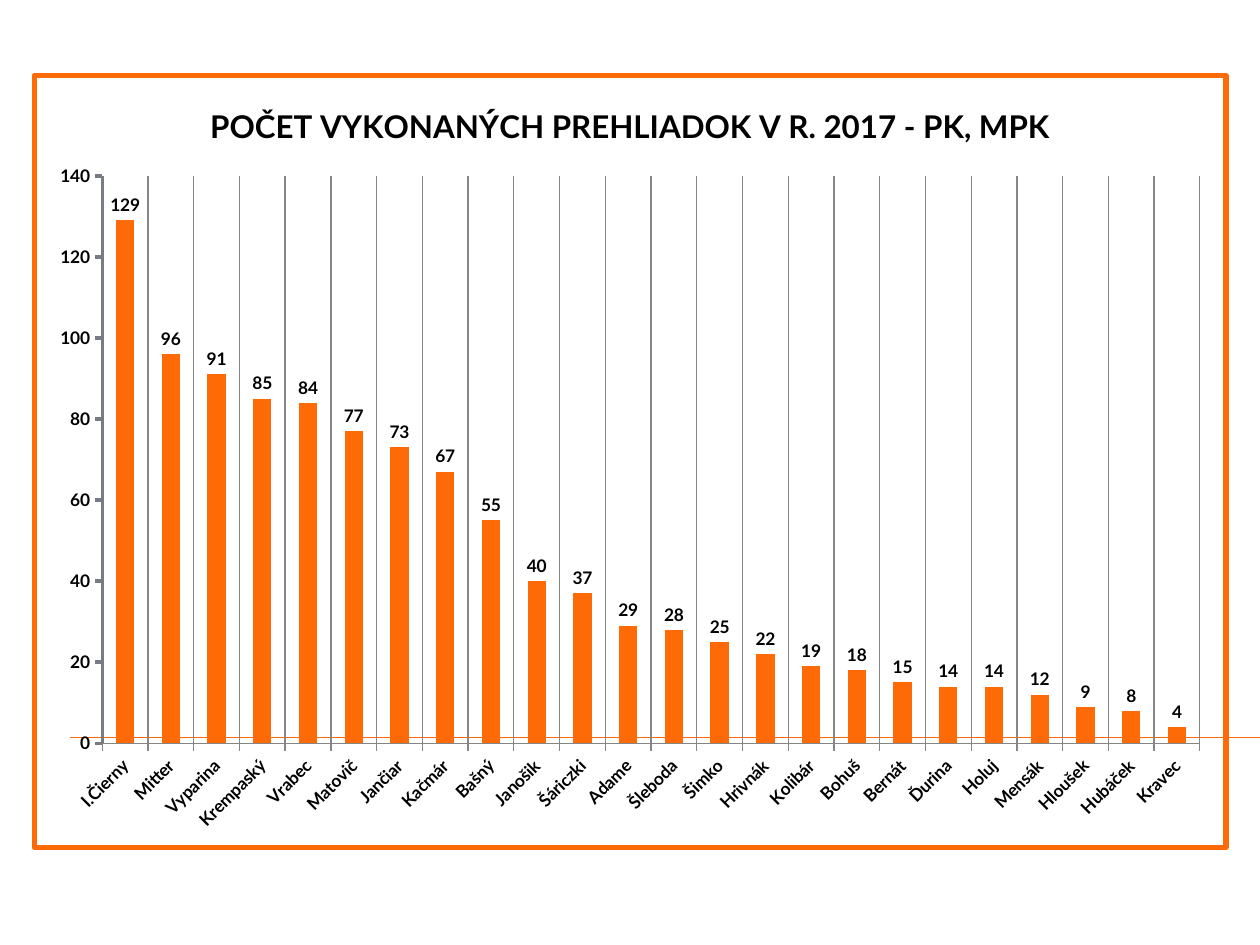
from dataclasses import dataclass

from lxml import etree
from pptx import Presentation
from pptx.chart.axis import CategoryAxis, ValueAxis
from pptx.chart.chart import Chart
from pptx.chart.data import CategoryChartData
from pptx.dml.color import RGBColor
from pptx.dml.line import LineFormat
from pptx.enum.chart import XL_CHART_TYPE, XL_LABEL_POSITION, XL_TICK_MARK
from pptx.enum.shapes import MSO_CONNECTOR
from pptx.oxml import parse_xml
from pptx.oxml.ns import nsdecls, qn
from pptx.slide import Slide
from pptx.text.text import Font
from pptx.util import Cm, Pt

COLUMNS = XL_CHART_TYPE.COLUMN_CLUSTERED
OUTSIDE_END = XL_LABEL_POSITION.OUTSIDE_END
TICK_OUT = XL_TICK_MARK.OUTSIDE
TICK_NONE = XL_TICK_MARK.NONE
STRAIGHT = MSO_CONNECTOR.STRAIGHT

ORANGE = "FE6A06"
GREY = "777C84"
GRID_GREY = "868686"
BLACK = "000000"
TYPEFACE = "Lato"
TITLE = "POČET VYKONANÝCH PREHLIADOK V R. 2017 - PK, MPK"


@dataclass(frozen=True)
class Inspector:
    surname: str
    inspections: int


INSPECTORS = [
    Inspector("I.Čierny", 129),
    Inspector("Mitter", 96),
    Inspector("Vyparina", 91),
    Inspector("Krempaský", 85),
    Inspector("Vrabec", 84),
    Inspector("Matovič", 77),
    Inspector("Jančiar", 73),
    Inspector("Kačmár", 67),
    Inspector("Bašný", 55),
    Inspector("Janošik", 40),
    Inspector("Šáriczki", 37),
    Inspector("Adame", 29),
    Inspector("Šleboda", 28),
    Inspector("Šimko", 25),
    Inspector("Hrivnák", 22),
    Inspector("Kolibár", 19),
    Inspector("Bohuš", 18),
    Inspector("Bernát", 15),
    Inspector("Ďurina", 14),
    Inspector("Holuj", 14),
    Inspector("Mensák", 12),
    Inspector("Hloušek", 9),
    Inspector("Hubáček", 8),
    Inspector("Kravec", 4),
]


def rgb(hex_colour: str) -> RGBColor:
    return RGBColor.from_string(hex_colour)


def style_font(font: Font, size: float, bold: bool = True) -> None:
    font.name = TYPEFACE
    font.size = Pt(size)
    font.bold = bold
    font.color.rgb = rgb(BLACK)


def style_line(line: LineFormat, colour: str, width: float) -> None:
    line.color.rgb = rgb(colour)
    line.width = Pt(width)


def draw_baseline(slide: Slide) -> None:
    baseline = slide.shapes.add_connector(
        STRAIGHT, Cm(1.42), Cm(14.86), Cm(25.4), Cm(14.86))
    style_line(baseline.line, ORANGE, 0.75)
    etree.SubElement(baseline.line._get_or_add_ln().getparent(), qn("a:effectLst"))


def frame_chart(chart: Chart, colour: str, width: float) -> None:
    border = parse_xml(
        f'<c:spPr {nsdecls("c", "a")}><a:noFill/><a:ln w="{Pt(width)}">'
        f'<a:solidFill><a:srgbClr val="{colour}"/></a:solidFill>'
        '<a:round/></a:ln></c:spPr>')
    chart.element.find(qn("c:chart")).addnext(border)


def place_plot(chart: Chart, x: float, y: float, w: float, h: float) -> None:
    plot_area = chart.element.find(f'{qn("c:chart")}/{qn("c:plotArea")}')
    for automatic in plot_area.findall(qn("c:layout")):
        plot_area.remove(automatic)
    edges = "".join(f'<c:{edge} val="{share}"/>'
                    for edge, share in zip("xywh", (x, y, w, h)))
    plot_area.insert(0, parse_xml(
        f'<c:layout {nsdecls("c")}><c:manualLayout><c:layoutTarget val="inner"/>'
        '<c:xMode val="edge"/><c:yMode val="edge"/>'
        f'{edges}</c:manualLayout></c:layout>'))


def style_axis(axis: CategoryAxis | ValueAxis, colour: str, width: float) -> None:
    axis.major_tick_mark = TICK_OUT
    axis.minor_tick_mark = TICK_NONE
    style_line(axis.format.line, colour, width)
    style_font(axis.tick_labels.font, 10)


def draw_inspections(slide: Slide, inspectors: list[Inspector]) -> None:
    counts = CategoryChartData()
    counts.categories = [inspector.surname for inspector in inspectors]
    counts.add_series("Series 1", [inspector.inspections for inspector in inspectors])
    chart = slide.shapes.add_chart(
        COLUMNS, Cm(0.64), Cm(1.47), Cm(24.13), Cm(15.67), counts).chart
    style_font(chart.font, 10, bold=False)
    frame_chart(chart, ORANGE, 3)
    place_plot(chart, 0.057, 0.13, 0.921, 0.735)
    chart.has_legend = False

    chart.has_title = True
    heading = chart.chart_title.text_frame
    heading.text = TITLE
    style_font(heading.paragraphs[0].runs[0].font, 18)
    chart.chart_title.include_in_layout = False

    surnames = chart.category_axis
    style_axis(surnames, GRID_GREY, 0.75)
    surnames.has_major_gridlines = True
    style_line(surnames.major_gridlines.format.line, GRID_GREY, 0.75)
    surnames.tick_labels.font._element.getparent().getparent().getparent().find(
        qn("a:bodyPr")).set("rot", "-2700000")

    scale = chart.value_axis
    style_axis(scale, GREY, 2)
    scale.has_major_gridlines = False
    scale.minimum_scale = 0
    scale.maximum_scale = 140
    scale.major_unit = 20

    columns = chart.plots[0]
    columns.gap_width = 150
    columns.vary_by_categories = False
    bars = columns.series[0]
    bars.format.fill.solid()
    bars.format.fill.fore_color.rgb = rgb(ORANGE)
    bars.invert_if_negative = False
    totals = bars.data_labels
    totals.show_value = True
    totals.position = OUTSIDE_END
    style_font(totals.font, 10)


def main() -> None:
    deck = Presentation()
    deck.slide_width = Cm(25.4)
    deck.slide_height = Cm(19.05)
    slide = deck.slides.add_slide(deck.slide_layouts[6])
    draw_baseline(slide)
    draw_inspections(slide, INSPECTORS)
    deck.save("out.pptx")


if __name__ == "__main__":
    main()
